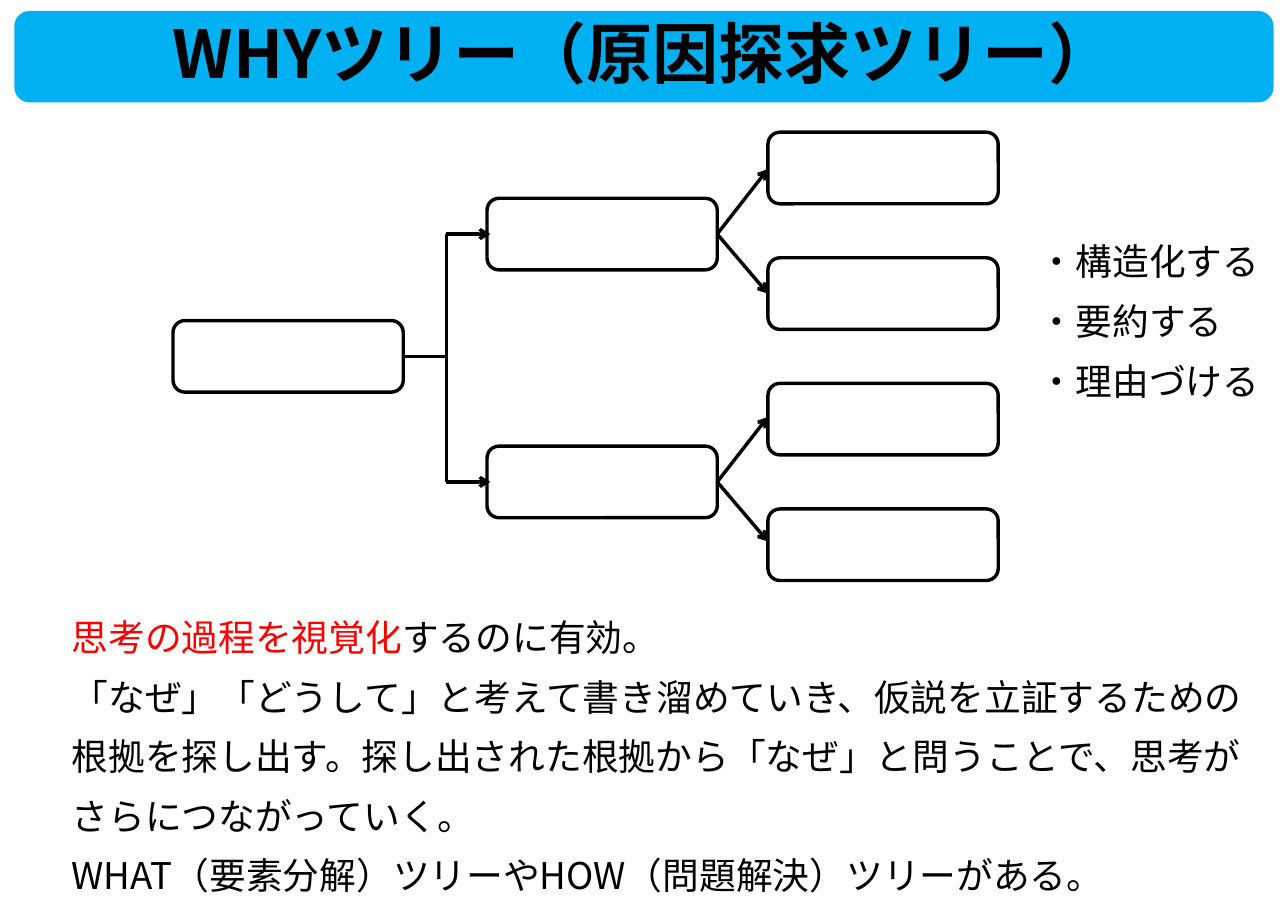
from typing import NamedTuple

from lxml.etree import SubElement
from pptx import Presentation
from pptx.dml.color import RGBColor as RGB
from pptx.enum.shapes import MSO_CONNECTOR as Conn, MSO_SHAPE as Shape
from pptx.enum.text import MSO_ANCHOR as Anchor, MSO_AUTO_SIZE as AutoSize, PP_ALIGN as Align
from pptx.oxml.ns import qn
from pptx.util import Inches, Pt

FONT = "Noto Sans CJK JP"
COLORS = {"banner": "00B0F0", "text": "000000", "accent": "FF0000", "box": "FFFFFF", "line": "000000"}
NODE_W, NODE_H = 2.09, 0.65
ROOT_X, BRANCH_X, LEAF_X, TRUNK_X = 1.57, 4.42, 6.97, 4.05


class Node(NamedTuple):
    x: float
    y: float


class Link(NamedTuple):
    x1: float
    y1: float
    x2: float
    y2: float
    arrow: bool = True


def color(name: str) -> RGB:
    return RGB.from_string(COLORS[name])


def place(sp, x: float, y: float, w: float, h: float) -> None:
    sp.left, sp.top, sp.width, sp.height = (Inches(v) for v in (x, y, w, h))


def add_text(p, text: str, *, size: float = 24, fill: str = "text", bold: bool = False) -> None:
    r = p.add_run()
    r.text = text
    r.font.name, r.font.size, r.font.bold = FONT, Pt(size), bold
    r.font.color.rgb = color(fill)
    SubElement(r.font._element, qn("a:ea"), typeface=FONT)


def fill_body(sp, lines: list[list[tuple[str, str]]]) -> None:
    """Write unbulleted lines, each a list of (text, colour) runs."""
    tf = sp.text_frame
    tf.word_wrap, tf.auto_size, tf.vertical_anchor = True, AutoSize.NONE, Anchor.TOP
    for i, runs in enumerate(lines):
        p = tf.add_paragraph() if i else tf.paragraphs[0]
        pPr = p._p.get_or_add_pPr()
        pPr.set("marL", "0")
        pPr.set("indent", "0")
        SubElement(pPr, qn("a:buNone"))
        p.alignment = Align.LEFT
        p.line_spacing = Pt(28.9)
        p.space_before = Pt(10 if i else 0)
        for text, fill in runs:
            add_text(p, text, fill=fill)


def add_round_box(shapes, x: float, y: float, w: float, h: float, fill: str, line: bool = True):
    sp = shapes.add_shape(Shape.ROUNDED_RECTANGLE, *(Inches(v) for v in (x, y, w, h)))
    sp.shadow.inherit = False
    sp.fill.solid()
    sp.fill.fore_color.rgb = color(fill)
    if line:
        sp.line.color.rgb = color("line")
        sp.line.width = Pt(2.25)
    else:
        sp.line.fill.background()
    return sp


def add_link(shapes, link: Link) -> None:
    cx = shapes.add_connector(Conn.STRAIGHT, *(Inches(v) for v in link[:4]))
    cx.line.color.rgb = color("line")
    cx.line.width = Pt(2.25)
    if link.arrow:
        SubElement(cx.line._get_or_add_ln(), qn("a:tailEnd"), type="arrow")
    SubElement(cx.element.spPr, qn("a:effectLst"))


def main() -> None:
    prs = Presentation()
    prs.slide_width, prs.slide_height = Inches(11.69), Inches(8.27)
    s = prs.slides.add_slide(prs.slide_layouts[3])
    title, explanation, skills = s.placeholders

    # Title on its banner
    banner = add_round_box(s.shapes, 0.13, 0.1, 11.43, 0.83, "banner", line=False)
    title.element.addprevious(banner.element)
    place(title, 0, 0.1, 11.69, 0.83)
    tf = title.text_frame
    tf.auto_size, tf.vertical_anchor = AutoSize.NONE, Anchor.MIDDLE
    p = tf.paragraphs[0]
    p.alignment, p.line_spacing = Align.CENTER, 0.9
    add_text(p, "WHYツリー（原因探求ツリー）", size=43.2, bold=True)

    # Explanation below the tree
    place(explanation, 0.55, 5.53, 11.01, 2.68)
    fill_body(explanation, [
        [("思考の過程を視覚化", "accent"), ("するのに有効。", "text")],
        [("「なぜ」「どうして」と考えて書き溜めていき、仮説を立証するための", "text")],
        [("根拠を探し出す。探し出された根拠から「なぜ」と問うことで、思考が", "text")],
        [("さらにつながっていく。", "text")],
        [("WHAT（要素分解）ツリーやHOW（問題解決）ツリーがある。", "text")],
    ])

    # Skills beside the tree
    place(skills, 9.33, 2.12, 2.36, 1.59)
    skills.fill.solid()
    skills.fill.fore_color.rgb = color("box")
    fill_body(skills, [[(t, "text")] for t in ("・構造化する", "・要約する", "・理由づける")])

    # Tree: root, two branches, four leaves
    root = Node(ROOT_X, 2.91)
    branches = [Node(BRANCH_X, 1.8 + 2.25 * i) for i in range(2)]
    leaves = [Node(LEAF_X, 1.2 + 1.14 * i) for i in range(4)]
    mid = NODE_H / 2
    links = [
        Link(ROOT_X + NODE_W, root.y + mid, TRUNK_X, root.y + mid, arrow=False),
        Link(TRUNK_X, branches[0].y + mid, TRUNK_X, branches[1].y + mid, arrow=False),
    ]
    links += [Link(TRUNK_X, b.y + mid, BRANCH_X + 0.03, b.y + mid) for b in branches]
    for b in branches:
        y = b.y + mid
        links += [Link(BRANCH_X + NODE_W, y, LEAF_X, y + dy) for dy in (-0.59, 0.54)]

    tree = s.shapes.add_group_shape().shapes
    for node in [root, *branches, *leaves]:
        add_round_box(tree, node.x, node.y, NODE_W, NODE_H, "box")
    for link in links:
        add_link(tree, link)

    prs.save("out.pptx")


if __name__ == "__main__":
    main()
